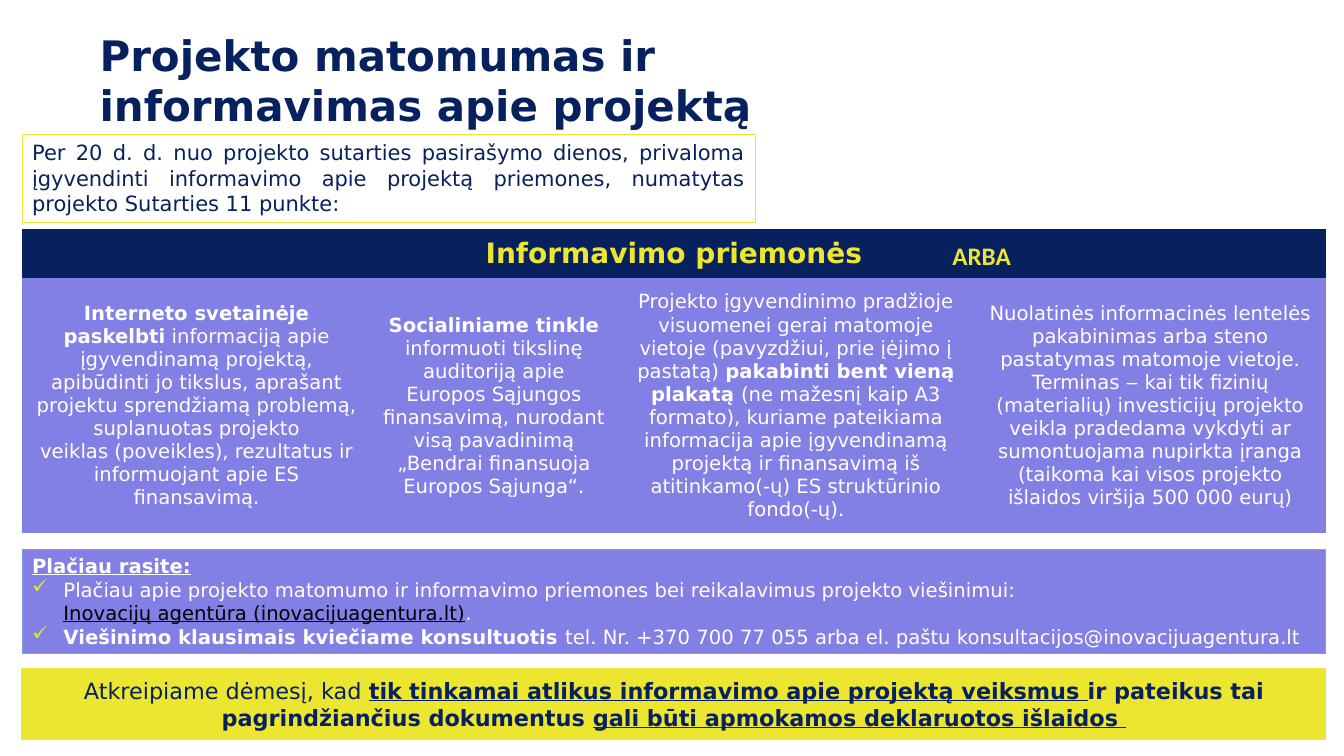
"""Build the slide on project visibility and information measures."""
from dataclasses import dataclass

from lxml.etree import SubElement
from pptx import Presentation
from pptx.dml.color import RGBColor
from pptx.enum.shapes import MSO_SHAPE
from pptx.enum.text import MSO_ANCHOR, PP_ALIGN
from pptx.oxml.ns import qn
from pptx.util import Cm, Pt


@dataclass(frozen=True)
class Theme:
    navy: RGBColor = RGBColor(0x07, 0x21, 0x5E)
    yellow: RGBColor = RGBColor(0xED, 0xE6, 0x30)
    violet: RGBColor = RGBColor(0x82, 0x80, 0xE5)
    blue: RGBColor = RGBColor(0x7D, 0x9C, 0xE8)
    white: RGBColor = RGBColor(0xFF, 0xFF, 0xFF)
    black: RGBColor = RGBColor(0, 0, 0)
    font: str = "DejaVu Sans"
    label_font: str = "Calibri"
    title: Pt = Pt(30)
    heading: Pt = Pt(20)
    label: Pt = Pt(18)
    notice: Pt = Pt(16)
    intro: Pt = Pt(15)
    body: Pt = Pt(14)


theme = Theme()


def write(frame, paragraphs, size, color, align=PP_ALIGN.LEFT,
          anchor=MSO_ANCHOR.MIDDLE, font=theme.font):
    """Write paragraphs of (text, marks): b bold, u underlined, k black."""
    frame.word_wrap = True
    frame.vertical_anchor = anchor
    for index, spans in enumerate(paragraphs):
        para = frame.paragraphs[0] if index == 0 else frame.add_paragraph()
        para.alignment = align
        for text, marks in spans:
            span = para.add_run()
            span.text = text
            span.font.name = font
            span.font.size = size
            span.font.bold = "b" in marks
            span.font.underline = "u" in marks
            span.font.color.rgb = theme.black if "k" in marks else color


def add_panel(top, height, fill, line, line_width):
    """Add a rectangle at the left margin; no fill colour leaves it open."""
    width = table_width if fill else Cm(18.47)
    panel = page.shapes.add_shape(MSO_SHAPE.RECTANGLE, left, top, width, height)
    panel.shadow.inherit = False
    if fill:
        panel.fill.solid()
        panel.fill.fore_color.rgb = fill
    else:
        panel.fill.background()
    panel.line.color.rgb = line
    panel.line.width = line_width
    return panel.text_frame


deck = Presentation()
deck.slide_width, deck.slide_height = Cm(33.87), Cm(19.05)
page = deck.slides.add_slide(deck.slide_layouts[6])

left = Cm(0.56)
column_widths = [Cm(8.79), Cm(6.2), Cm(9.02), Cm(8.84)]
row_heights = [Cm(1.24), Cm(6.43)]
table_width = sum(column_widths)

measures = [
    [[("Interneto svetainėje paskelbti", "b"),
      (" informaciją apie įgyvendinamą projektą, apibūdinti jo tikslus, aprašant "
       "projektu sprendžiamą problemą, suplanuotas projekto", "")],
     [("veiklas (poveikles), rezultatus ir informuojant apie ES finansavimą.", "")]],
    [[("Socialiniame tinkle ", "b"),
      ("informuoti tikslinę auditoriją apie Europos Sąjungos finansavimą, nurodant "
       "visą pavadinimą „Bendrai finansuoja Europos Sąjunga“.", "")]],
    [[("Projekto įgyvendinimo pradžioje visuomenei gerai matomoje vietoje "
       "(pavyzdžiui, prie įėjimo į pastatą) ", ""),
      ("pakabinti bent vieną plakatą ", "b"),
      ("(ne mažesnį kaip A3 formato), kuriame pateikiama informacija apie "
       "įgyvendinamą projektą ir finansavimą iš atitinkamo(-ų) ES struktūrinio "
       "fondo(-ų).", "")]],
    [[("Nuolatinės informacinės lentelės pakabinimas arba steno pastatymas matomoje "
       "vietoje. Terminas ‒ kai tik fizinių (materialių) investicijų projekto veikla "
       "pradedama vykdyti ar sumontuojama nupirkta įranga (taikoma kai visos projekto "
       "išlaidos viršija 500 000 eurų)", "")]],
]

table = page.shapes.add_table(2, len(measures), left, Cm(5.77), table_width,
                              sum(row_heights)).table
table._tbl.tblPr.find(qn("a:tableStyleId")).text = "{2D5ABB26-0587-4C30-8999-92F81FD0307C}"
for column, width in zip(table.columns, column_widths):
    column.width = width
for row, height in zip(table.rows, row_heights):
    row.height = height
header = table.cell(0, 0)
header.merge(table.cell(0, len(measures) - 1))
header.fill.solid()
header.fill.fore_color.rgb = theme.navy
header.vertical_anchor = MSO_ANCHOR.MIDDLE
write(header.text_frame, [[("Informavimo priemonės", "b")]], theme.heading,
      theme.yellow, PP_ALIGN.CENTER)
for index, paragraphs in enumerate(measures):
    cell = table.cell(1, index)
    cell.fill.solid()
    cell.fill.fore_color.rgb = theme.violet
    cell.vertical_anchor = MSO_ANCHOR.MIDDLE
    write(cell.text_frame, paragraphs, theme.body, theme.white, PP_ALIGN.CENTER)

intro = add_panel(Cm(3.4), Cm(2.2), None, theme.yellow, Pt(0.75))
write(intro, [[("Per 20 d. d. nuo projekto sutarties pasirašymo dienos, privaloma "
                "įgyvendinti informavimo apie projektą priemones, numatytas projekto "
                "Sutarties 11 punkte:", "")]],
      theme.intro, theme.navy, PP_ALIGN.JUSTIFY, MSO_ANCHOR.TOP)

title = page.shapes.add_textbox(Cm(2.26), Cm(0.81), Cm(17.22), Cm(2.39))
write(title.text_frame, [[("Projekto matomumas ir informavimas apie projektą", "b")]],
      theme.title, theme.navy)

details = add_panel(Cm(13.84), Cm(2.64), theme.violet, theme.blue, Pt(0.75))
write(details, [
    [("Plačiau rasite:", "bu")],
    [("Plačiau apie projekto matomumo ir informavimo priemones bei reikalavimus "
      "projekto viešinimui:", "")],
    [("Inovacijų agentūra (inovacijuagentura.lt)", "uk"), (".", "")],
    [("Viešinimo klausimais kviečiame konsultuotis ", "b"),
     ("tel. Nr. +370 700 77 055 arba el. paštu konsultacijos@inovacijuagentura.lt", "")],
], theme.body, theme.white, anchor=MSO_ANCHOR.TOP)
for index, para in enumerate(details.paragraphs[1:]):
    properties = para._p.get_or_add_pPr()
    properties.set("marL", str(Cm(0.79)))
    if index != 1:
        properties.set("indent", str(-Cm(0.79)))
        bullet_color = SubElement(properties, qn("a:buClr"))
        SubElement(bullet_color, qn("a:srgbClr"), val=str(theme.yellow))
        SubElement(properties, qn("a:buChar"), char="✓")

notice = add_panel(Cm(16.84), Cm(1.8), theme.yellow, theme.yellow, Pt(1))
write(notice, [[
    ("Atkreipiame dėmesį, kad ", ""),
    ("tik", "bu"),
    (" ", "u"),
    ("tinkamai atlikus informavimo apie projektą veiksmus ", "bu"),
    ("ir pateikus tai pagrindžiančius dokumentus ", "b"),
    ("gali būti apmokamos deklaruotos išlaidos ", "bu"),
]], theme.notice, theme.navy, PP_ALIGN.CENTER)

label = page.shapes.add_textbox(Cm(23.75), Cm(5.92), Cm(2.01), Cm(1.02)).text_frame
write(label, [[("ARBA", "b")]], theme.label, theme.yellow,
      anchor=MSO_ANCHOR.TOP, font=theme.label_font)
label.word_wrap = False

deck.save("out.pptx")
